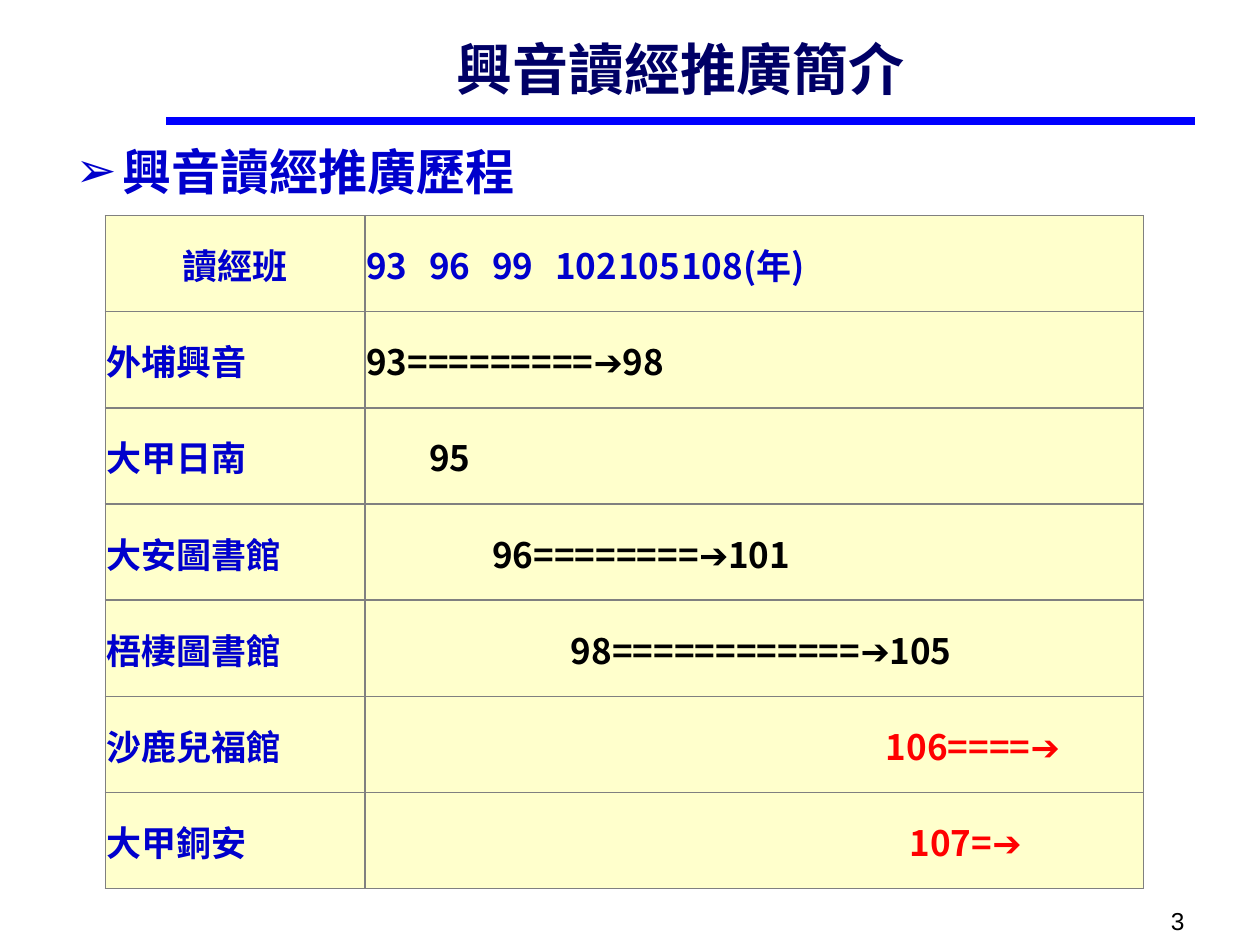
from lxml.etree import SubElement
from pptx import Presentation
from pptx.dml.color import RGBColor
from pptx.enum.shapes import MSO_CONNECTOR
from pptx.enum.text import MSO_ANCHOR, MSO_AUTO_SIZE, PP_ALIGN
from pptx.oxml.ns import qn
from pptx.util import Pt

CJK = "Noto Sans CJK SC"
BLUE, BLACK, RED = "0000CC", "000000", "FF0000"

YEARS = ["93", "96", "99", "102", "105", "108(年)"]
STEP = 72  # points from one year mark to the next

# Class name, span of years, left indent in points, colour
ROWS = [
    ("外埔興音", "93=========➔98", 0, BLACK),
    ("大甲日南", "95", 36, BLACK),
    ("大安圖書館", "96========➔101", 72, BLACK),
    ("梧棲圖書館", "98============➔105", 117, BLACK),
    ("沙鹿兒福館", "106====➔", 297, RED),
    ("大甲銅安", "107=➔", 310.5, RED),
]


def color(code):
    return RGBColor.from_string(code)


def write(frame, text, size=20, font="Arial", tint=BLUE, bold=True,
          align=PP_ALIGN.LEFT, left=0, hang=0, bullet=None, tabs=()):
    para = frame.paragraphs[0]
    props = para._p.get_or_add_pPr()
    props.set("marL", str(Pt(left)))
    props.set("indent", str(Pt(-hang)))
    if bullet:
        SubElement(props, qn("a:buChar")).set("char", bullet)
    if tabs:
        stops = SubElement(props, qn("a:tabLst"))
        for stop in tabs:
            SubElement(stops, qn("a:tab"), pos=str(Pt(stop)), algn="l")
    para.alignment = align
    para.space_before = Pt(0)
    run = para.add_run()
    run.text = text
    run.font.size = Pt(size)
    run.font.bold = bold
    run.font.name = font
    run.font.color.rgb = color(tint)
    SubElement(run._r.get_or_add_rPr(), qn("a:ea")).set("typeface", CJK)


def place(shape, left, top, width, height, anchor):
    shape.left, shape.top = Pt(left), Pt(top)
    shape.width, shape.height = Pt(width), Pt(height)
    frame = shape.text_frame
    frame.word_wrap = True
    frame.auto_size = MSO_AUTO_SIZE.NONE
    frame.vertical_anchor = anchor
    return frame


def rule(slide, left, top, right):
    line = slide.shapes.add_connector(
        MSO_CONNECTOR.STRAIGHT, Pt(left), Pt(top), Pt(right), Pt(top))
    line.line.color.rgb = color("0000FF")
    line.line.width = Pt(4.5)
    SubElement(line._element.spPr, qn("a:effectLst"))


def dress(cell):
    cell.margin_left = cell.margin_right = cell.margin_top = Pt(0.75)
    cell.margin_bottom = Pt(0)
    cell.vertical_anchor = MSO_ANCHOR.MIDDLE
    # Borders come before the fill in the cell properties
    props = cell._tc.get_or_add_tcPr()
    for side in ("lnL", "lnR", "lnT", "lnB"):
        edge = SubElement(props, qn("a:" + side), w=str(Pt(1)))
        fill = SubElement(edge, qn("a:solidFill"))
        SubElement(fill, qn("a:srgbClr"), val="808080")
    cell.fill.solid()
    cell.fill.fore_color.rgb = color("FFFFCC")


def chart_years(slide):
    count = len(ROWS) + 1
    table = slide.shapes.add_table(
        count, 2, Pt(60.2), Pt(123.2), Pt(593.3), Pt(54.95 * count)).table
    table.columns[0].width = Pt(148.3)
    table.columns[1].width = Pt(445)
    for row in table.rows:
        for cell in row.cells:
            dress(cell)
    # Heading row: one tab stop for each year after the first
    write(table.cell(0, 0).text_frame, "讀經班", align=PP_ALIGN.CENTER)
    write(table.cell(0, 1).text_frame, "\t".join(YEARS), font=CJK,
          tabs=[STEP * i for i in range(1, len(YEARS))])
    for i, (name, span, left, tint) in enumerate(ROWS, 1):
        write(table.cell(i, 0).text_frame, name)
        write(table.cell(i, 1).text_frame, span, font=CJK, tint=tint, left=left)


def main():
    deck = Presentation()
    deck.slide_width, deck.slide_height = Pt(720), Pt(540)
    slide = deck.slides.add_slide(deck.slide_layouts[1])

    # Title and rule
    frame = place(slide.shapes.title, 95, 12, 588, 54, MSO_ANCHOR.MIDDLE)
    write(frame, "興音讀經推廣簡介", size=32, tint="000066", align=PP_ALIGN.CENTER)
    rule(slide, 95, 69, 683)

    # Subject line
    frame = place(slide.placeholders[1], 36, 77, 648, 430.5, MSO_ANCHOR.TOP)
    write(frame, "興音讀經推廣歷程", size=28, left=27, hang=27, bullet="➢")

    # Timeline
    chart_years(slide)

    # Page number
    box = slide.shapes.add_textbox(0, 0, 0, 0)
    frame = place(box, 516, 514, 168, 16, MSO_ANCHOR.TOP)
    write(frame, "3", size=14, tint=BLACK, bold=False, align=PP_ALIGN.RIGHT)

    deck.save("out.pptx")


if __name__ == "__main__":
    main()
